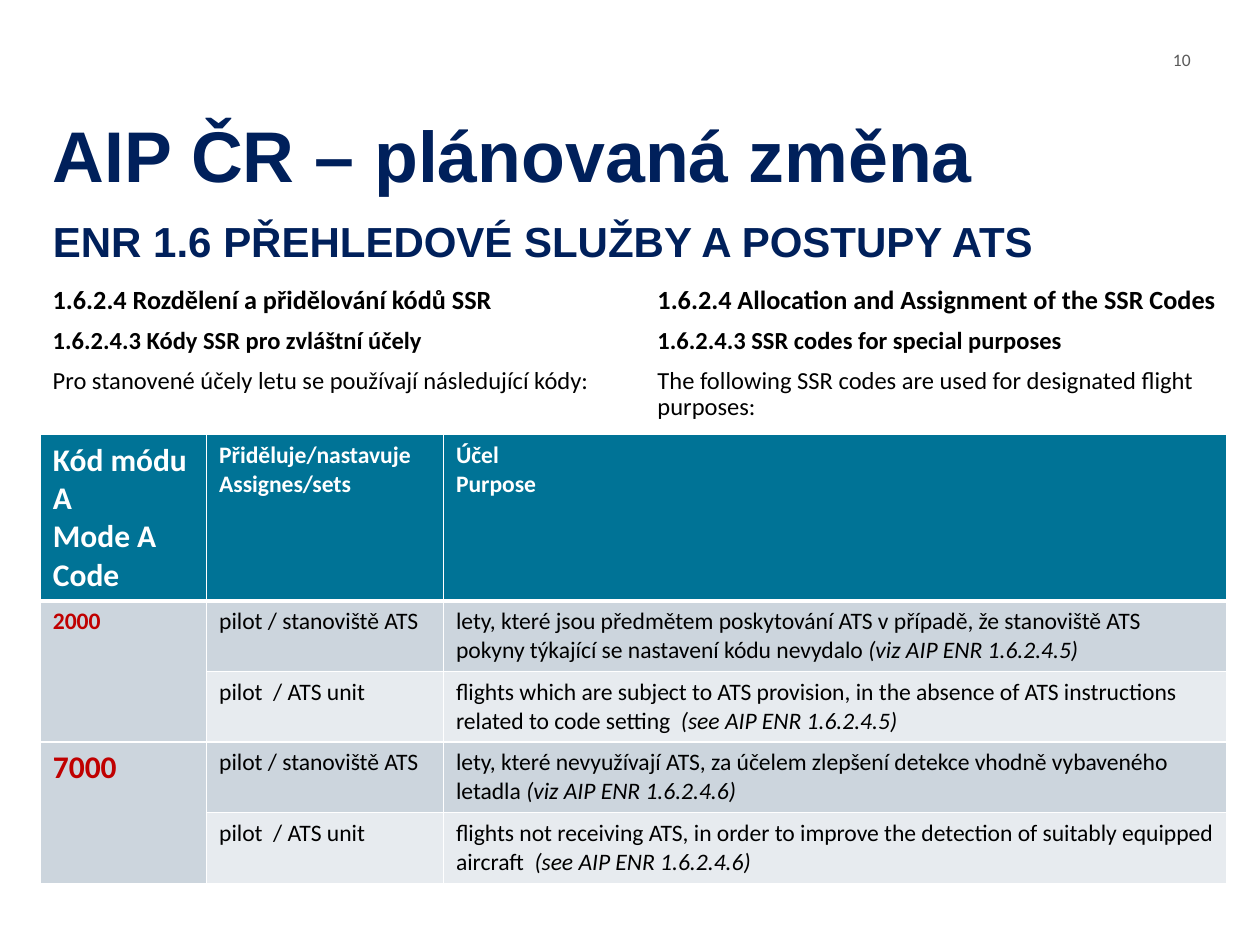
import pptx
import pptx.util
import pptx.dml.color
import pptx.enum.text
import pptx.oxml
import pptx.oxml.ns
from dataclasses import dataclass

Pt = pptx.util.Pt


@dataclass(frozen=True)
class Theme:
    navy: str = "00205B"
    teal: str = "007396"
    red: str = "C00000"
    black: str = "000000"
    white: str = "FFFFFF"
    grey: str = "5A5A5A"
    band_dark: str = "CCD5DD"
    band_light: str = "E7EBEF"
    heading_font: str = "Arial"
    body_font: str = "Calibri"
    title_size: float = 41
    subtitle_size: float = 24
    code_size: float = 18
    section_size: float = 15
    body_size: float = 14
    cell_size: float = 13.5
    number_size: float = 10


THEME = Theme()


def colour(value):
    return pptx.dml.color.RGBColor.from_string(value)


def apply(target, values):
    for name, value in values.items():
        setattr(target, name, value)


def style(size, shade, bold=False, italic=False, name=THEME.body_font):
    return {"size": Pt(size), "bold": bold, "italic": italic, "name": name, "shade": shade}


class SlideBuilder:
    COLUMNS, ROWS = 100, 75

    def __init__(self, deck, theme):
        self.deck = deck
        self.theme = theme
        self.page = deck.slides.add_slide(deck.slide_layouts[5])

    def across(self, columns):
        return round(self.deck.slide_width * columns / self.COLUMNS)

    def down(self, rows):
        return round(self.deck.slide_height * rows / self.ROWS)

    def area(self, left, top, width, height):
        return self.across(left), self.down(top), self.across(width), self.down(height)

    def fill_text(self, frame, paragraphs, **layout):
        for index, spans in enumerate(paragraphs):
            para = frame.paragraphs[0] if index == 0 else frame.add_paragraph()
            apply(para, {"alignment": pptx.enum.text.PP_ALIGN.LEFT, **layout})
            if index == 0:
                para.space_before = Pt(0)
            for text, look in spans:
                span = para.add_run()
                span.text = text
                apply(span.font, {key: value for key, value in look.items() if key != "shade"})
                span.font.color.rgb = colour(look["shade"])

    def frame(self, shape, **margins):
        apply(shape.text_frame, {
            "word_wrap": True,
            "auto_size": pptx.enum.text.MSO_AUTO_SIZE.NONE,
            "vertical_anchor": pptx.enum.text.MSO_ANCHOR.TOP,
            **{key: self.across(value) for key, value in margins.items()},
        })
        return shape.text_frame

    def title(self, area, paragraphs):
        box = self.page.shapes.title
        apply(box, dict(zip(("left", "top", "width", "height"), self.area(*area))))
        frame = self.frame(box, margin_left=1, margin_top=0.9)
        self.fill_text(frame, paragraphs, line_spacing=0.9, space_before=Pt(13))

    def text(self, area, paragraphs, margins, **layout):
        box = self.page.shapes.add_textbox(*self.area(*area))
        self.fill_text(self.frame(box, **margins), paragraphs, **layout)

    def border(self, cell, edge, width):
        properties = cell._tc.get_or_add_tcPr()
        line = pptx.oxml.parse_xml(
            f'<a:{edge} {pptx.oxml.ns.nsdecls("a")} w="{Pt(width)}"><a:solidFill>'
            f'<a:srgbClr val="{self.theme.white}"/></a:solidFill></a:{edge}>')
        position = sum(child.tag.split("}")[1].startswith("ln") for child in properties)
        properties.insert(position, line)

    def table(self, left, top, widths, heights, rows, fills, merges):
        area = self.area(left, top, sum(widths), sum(heights))
        table = self.page.shapes.add_table(len(rows), len(widths), *area).table
        for column, width in zip(table.columns, widths):
            column.width = self.across(width)
        for row, height in zip(table.rows, heights):
            row.height = self.down(height)
        for first, last in merges:
            table.cell(*first).merge(table.cell(*last))
        for row_index, row in enumerate(rows):
            for column_index, paragraphs in enumerate(row):
                cell = table.cell(row_index, column_index)
                cell.fill.solid()
                cell.fill.fore_color.rgb = colour(fills[row_index][column_index])
                self.fill_text(cell.text_frame, paragraphs)
                for edge in ("lnL", "lnR", "lnT", "lnB"):
                    heavy = (row_index, edge) in ((0, "lnB"), (1, "lnT"))
                    self.border(cell, edge, 3 if heavy else 1)


def main():
    theme = THEME
    deck = pptx.Presentation()
    deck.slide_width, deck.slide_height = pptx.util.Inches(10), pptx.util.Inches(7.5)
    builder = SlideBuilder(deck, theme)

    title = style(theme.title_size, theme.navy, bold=True, name=theme.heading_font)
    subtitle = style(theme.subtitle_size, theme.navy, bold=True, name=theme.heading_font)
    section = style(theme.section_size, theme.black, bold=True)
    subsection = style(theme.body_size, theme.black, bold=True)
    body = style(theme.body_size, theme.black)
    head_large = style(theme.code_size, theme.white, bold=True)
    head = style(theme.cell_size, theme.white, bold=True)
    code = style(theme.cell_size, theme.red, bold=True)
    code_large = style(theme.code_size, theme.red, bold=True)
    plain = style(theme.cell_size, theme.black)
    reference = style(theme.cell_size, theme.black, italic=True)

    builder.text((93.1, 3.4, 6.4, 2.7), [[("10", style(theme.number_size, theme.grey))]],
                 {"margin_left": 0, "margin_right": 0})
    builder.title((3.2, 8.7, 94.1, 13.6), [
        [("AIP ČR – plánovaná změna", title)],
        [("ENR 1.6 PŘEHLEDOVÉ SLUŽBY A POSTUPY ATS", subtitle)],
    ])

    languages = [
        (3.2, ("1.6.2.4 Rozdělení a přidělování kódů SSR",
               "1.6.2.4.3 Kódy SSR pro zvláštní účely",
               "Pro stanovené účely letu se používají následující kódy:")),
        (51.2, ("1.6.2.4 Allocation and Assignment of the SSR Codes",
                "1.6.2.4.3 SSR codes for special purposes",
                "The following SSR codes are used for designated flight purposes:")),
    ]
    for left, lines in languages:
        paragraphs = [[pair] for pair in zip(lines, (section, subsection, body))]
        builder.text((left, 22.3, 46.4, 12.2), paragraphs,
                     {"margin_left": 1, "margin_right": 0.5},
                     line_spacing=0.9, space_before=Pt(7.5))

    header = [
        [[("Kód módu A", head_large)], [("Mode A Code", head_large)]],
        [[("Přiděluje/nastavuje", head)], [("Assignes/sets", head)]],
        [[("Účel", head)], [("Purpose", head)]],
    ]
    czech, english = "pilot / stanoviště ATS", "pilot  / ATS unit"
    entries = [
        ([[("2000", code)]], czech,
         "lety, které jsou předmětem poskytování ATS v případě, že stanoviště ATS "
         "pokyny týkající se nastavení kódu nevydalo ", "(viz AIP ENR 1.6.2.4.5)"),
        ([], english,
         "flights which are subject to ATS provision, in the absence of ATS instructions "
         "related to code setting  ", "(see AIP ENR 1.6.2.4.5)"),
        ([[("7000", code_large)]], czech,
         "lety, které nevyužívají ATS, za účelem zlepšení detekce vhodně vybaveného "
         "letadla ", "(viz AIP ENR 1.6.2.4.6)"),
        ([], english,
         "flights not receiving ATS, in order to improve the detection of suitably equipped "
         "aircraft  ", "(see AIP ENR 1.6.2.4.6)"),
    ]
    rows = [header] + [
        [label, [[(setter, plain)]], [[(purpose, plain), (source, reference)]]]
        for label, setter, purpose, source in entries
    ]
    bands = [[theme.band_dark] * 3, [theme.band_dark] + [theme.band_light] * 2]
    builder.table(3.2, 34.5, (13.2, 18.8, 62.2), (13,) + (5.6,) * 4, rows,
                  [[theme.teal] * 3] + bands * 2,
                  [((1, 0), (2, 0)), ((3, 0), (4, 0))])

    deck.save("out.pptx")


if __name__ == "__main__":
    main()
